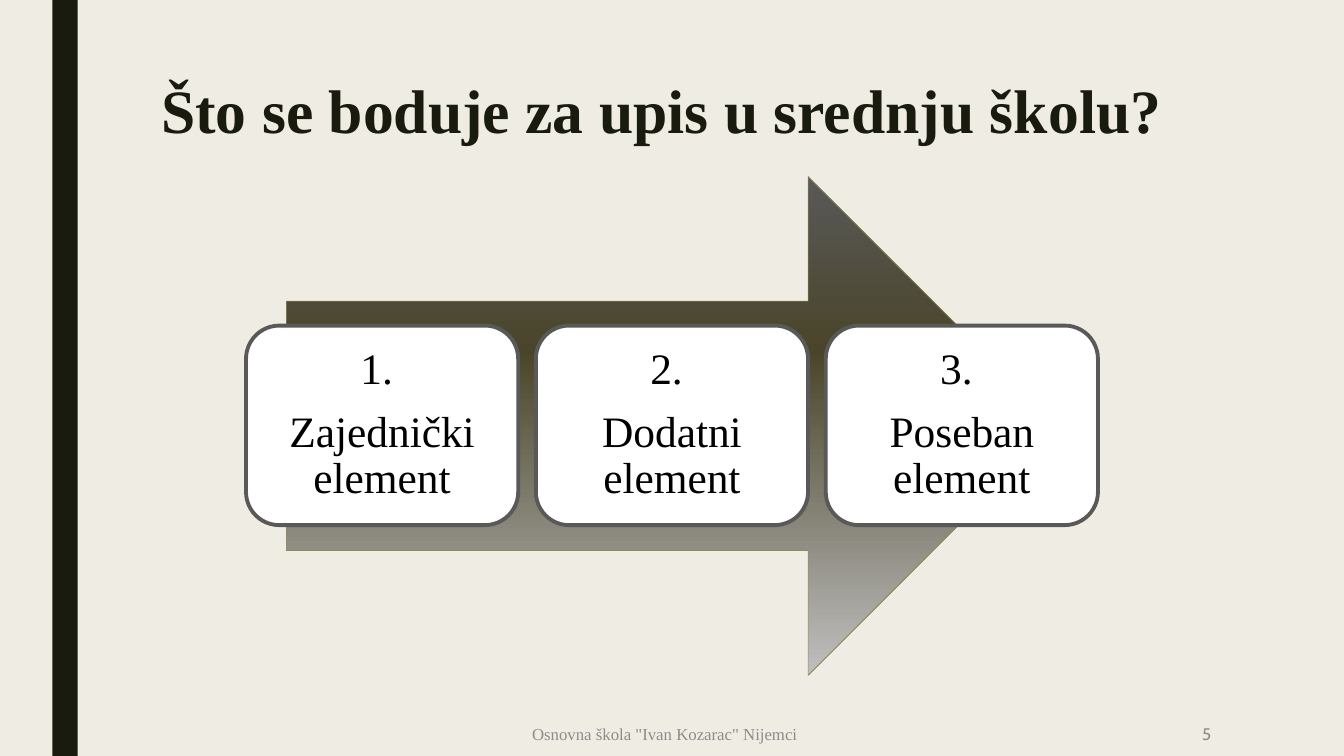
import copy
from dataclasses import dataclass

import pptx
import pptx.dml.color
import pptx.enum.shapes
import pptx.enum.text
import pptx.oxml.ns
import pptx.util

Inches, Pt = pptx.util.Inches, pptx.util.Pt
RGB = pptx.dml.color.RGBColor
Kind = pptx.enum.shapes.MSO_SHAPE
Align = pptx.enum.text.PP_ALIGN
Anchor = pptx.enum.text.MSO_ANCHOR

CREAM = RGB(0xEF, 0xED, 0xE3)
INK = RGB(0x19, 0x1B, 0x0E)
GREY = RGB(0x59, 0x59, 0x59)
OLIVE = RGB(0x4A, 0x45, 0x2A)
SILVER = RGB(0xBF, 0xBF, 0xBF)
KHAKI = RGB(0x94, 0x8A, 0x55)
MUTED = RGB(0x8C, 0x8C, 0x8C)
WHITE = RGB(0xFF, 0xFF, 0xFF)
BLACK = RGB(0, 0, 0)
SERIF = "Times New Roman"

CARD_LEFT, CARD_STEP = 2.44, 2.875
CARDS = ["Zajednički element", "Dodatni element", "Poseban element"]


@dataclass
class Label:
    box: tuple[float, float, float, float]
    text: str
    size: int
    color: RGB
    font: str = SERIF
    bold: bool = False
    align: Align = Align.CENTER
    anchor: Anchor = Anchor.MIDDLE
    line: float = 1.0


LABELS = [
    Label((1.5, 0.75, 10.5, 1.62), "Što se boduje za upis u srednju školu?", 44, INK,
          bold=True, align=Align.LEFT, anchor=Anchor.TOP, line=0.89),
    Label((3.16, 7.06, 6.87, 0.44), 'Osnovna škola "Ivan Kozarac" Nijemci', 12, MUTED),
    Label((10.36, 7.06, 1.75, 0.44), "5", 12, MUTED, font="Cabin", align=Align.RIGHT),
]


def put(target, values: dict) -> None:
    """Set every named attribute on the target."""
    for name, value in values.items():
        setattr(target, name, value)


def add_form(slide, kind, box, fill=None, edge=None, width: float = 0):
    """Add a preset shape; without an edge colour it has no outline."""
    form = slide.shapes.add_shape(kind, *map(Inches, box))
    form.shadow.inherit = False
    if fill is not None:
        form.fill.solid()
        form.fill.fore_color.rgb = fill
    if edge is None:
        form.line.fill.background()
    else:
        form.line.color.rgb = edge
        form.line.width = Pt(width)
    return form


def shade(form, stops: list) -> None:
    """Fill from top to bottom with three (position, colour) stops."""
    form.fill.gradient()
    form.fill.gradient_angle = 270
    items = form._element.spPr.find(".//" + pptx.oxml.ns.qn("a:gsLst"))
    items.insert(1, copy.deepcopy(items[0]))
    for stop, (place, color) in zip(form.fill.gradient_stops, stops):
        stop.position = place
        stop.color.rgb = color


def write(frame, lines: list[str], para: dict, font: dict) -> None:
    frame.text = "\n".join(lines)
    for item in frame.paragraphs:
        put(item, para)
        put(item.runs[0].font, font)
        item.runs[0].font.color.rgb = font["color_rgb"] if "color_rgb" in font else BLACK


def add_label(slide, label: Label) -> None:
    frame = slide.shapes.add_textbox(*map(Inches, label.box)).text_frame
    put(frame, {"word_wrap": True, "vertical_anchor": label.anchor})
    write(frame, [label.text],
          {"alignment": label.align, "line_spacing": label.line},
          {"name": label.font, "size": Pt(label.size), "bold": label.bold,
           "color_rgb": label.color})


def add_card(slide, index: int, text: str) -> None:
    box = (CARD_LEFT + index * CARD_STEP, 3.23, 2.7, 1.98)
    frame = add_form(slide, Kind.ROUNDED_RECTANGLE, box, WHITE, GREY, 2.75).text_frame
    sides = ("left", "top", "right", "bottom")
    put(frame, {f"margin_{side}": Inches(0.13) for side in sides})
    put(frame, {"word_wrap": True, "vertical_anchor": Anchor.MIDDLE})
    write(frame, [f"{index + 1}. ", text],
          {"alignment": Align.CENTER, "line_spacing": 0.9, "space_after": Pt(11)},
          {"name": SERIF, "size": Pt(31)})


def main() -> None:
    deck = pptx.Presentation()
    put(deck, {"slide_width": Inches(13.33), "slide_height": Inches(7.5)})
    slide = deck.slides.add_slide(deck.slide_layouts[6])
    slide.background.fill.solid()
    slide.background.fill.fore_color.rgb = CREAM

    add_form(slide, Kind.RECTANGLE, (0.52, 0, 0.25, 7.5), INK)
    arrow = add_form(slide, Kind.RIGHT_ARROW, (2.84, 1.75, 7.65, 4.95),
                     edge=KHAKI, width=0.5)
    shade(arrow, [(0, GREY), (0.35, OLIVE), (1, SILVER)])
    for index, text in enumerate(CARDS):
        add_card(slide, index, text)
    for label in LABELS:
        add_label(slide, label)
    deck.save("out.pptx")


if __name__ == "__main__":
    main()
